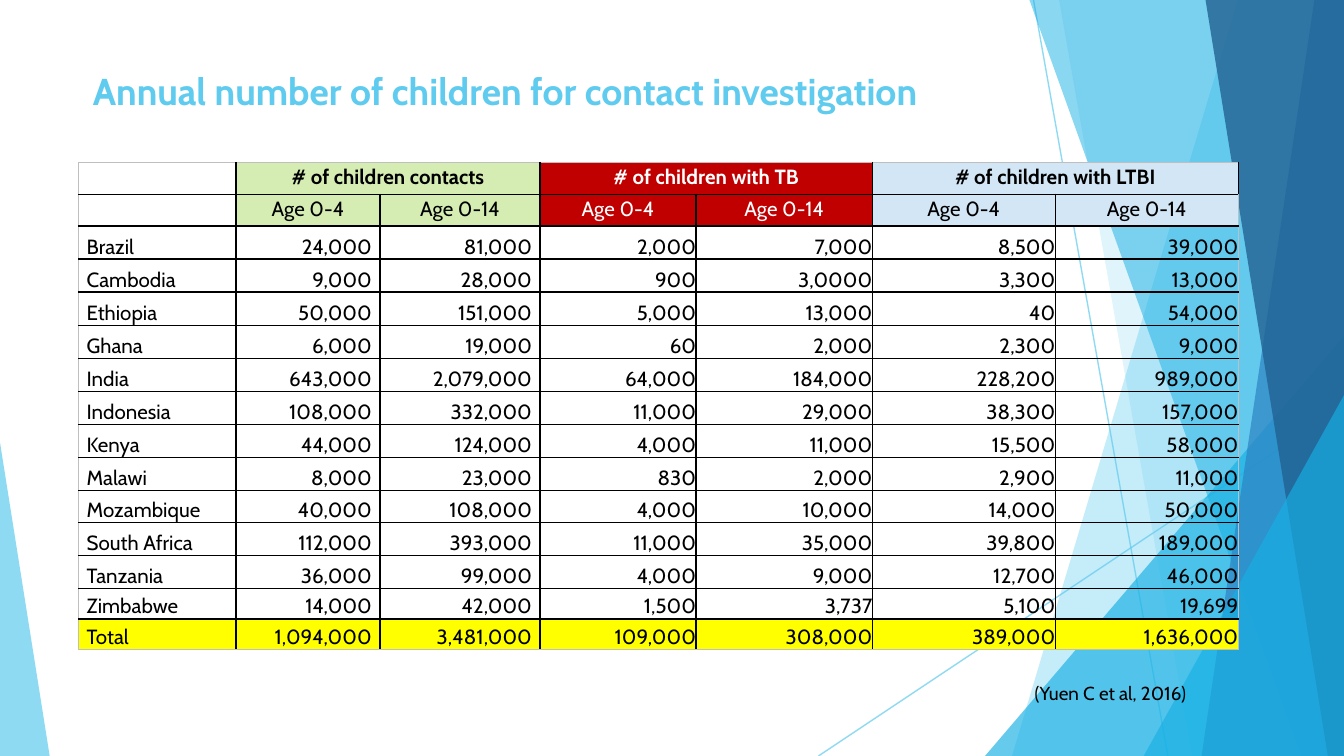
"""Build a slide with a table of children needing contact investigation."""
import pptx
import pptx.dml.color
import pptx.enum.dml
import pptx.enum.shapes
import pptx.enum.text
import pptx.oxml
import pptx.oxml.ns
import pptx.util

THEME = {
    "font": "Cabin",
    "title_size": 20, "table_size": 11, "source_size": 10.1,
    "sky": "5FCBEF", "cyan": "17B0E4", "blue": "2E83C3", "navy": "226292",
    "black": "000000", "white": "FFFFFF", "grey": "BFBFBF",
    "green": "D5EDB3", "red": "C00000", "pale": "D3E6F5", "yellow": "FFFF00",
}

TITLE = "Annual number of children for contact investigation"
SOURCE = "(Yuen C et al, 2016)"
GROUPS = [
    ("# of children contacts", "green", "black"),
    ("# of children with TB", "red", "white"),
    ("# of children with LTBI", "pale", "black"),
]
AGES = ["Age 0-4", "Age 0-14"]
COUNTRIES = [
    ("Brazil", "24,000", "81,000", "2,000", "7,000", "8,500", "39,000"),
    ("Cambodia", "9,000", "28,000", "900", "3,0000", "3,300", "13,000"),
    ("Ethiopia", "50,000", "151,000", "5,000", "13,000", "40", "54,000"),
    ("Ghana", "6,000", "19,000", "60", "2,000", "2,300", "9,000"),
    ("India", "643,000", "2,079,000", "64,000", "184,000", "228,200", "989,000"),
    ("Indonesia", "108,000", "332,000", "11,000", "29,000", "38,300", "157,000"),
    ("Kenya", "44,000", "124,000", "4,000", "11,000", "15,500", "58,000"),
    ("Malawi", "8,000", "23,000", "830", "2,000", "2,900", "11,000"),
    ("Mozambique", "40,000", "108,000", "4,000", "10,000", "14,000", "50,000"),
    ("South Africa", "112,000", "393,000", "11,000", "35,000", "39,800", "189,000"),
    ("Tanzania", "36,000", "99,000", "4,000", "9,000", "12,700", "46,000"),
    ("Zimbabwe", "14,000", "42,000", "1,500", "3,737", "5,100", "19,699"),
    ("Total", "1,094,000", "3,481,000", "109,000", "308,000", "389,000", "1,636,000"),
]
COL_WEIGHTS = [117, 107, 119, 116, 131, 136, 136]
ROW_WEIGHTS = [24, 24] + [25] * 8 + [24, 25, 25, 23, 23]

# Percentages of the slide's width and height.
TITLE_BOX = (5.9, 8.18, 86.2, 11.38)
TABLE_BOX = (5.85, 21.51, 86.3, 64.4)
SOURCE_BOX = (76, 89.24, 17.1, 4.8)
RAYS = [((76.9, 0), (86.9, 100)), ((100, 53.69), (60.9, 100))]
FACETS = [
    ("band", [(92.1, 0), (100, 0), (100, 100), (75.3, 100)], "sky", 36),
    ("band", [(78.8, 0), (100, 0), (100, 100), (88.7, 100)], "sky", 20),
    ("triangle", (73.3, 44.44, 26.7, 55.56, 1), "cyan", 66),
    ("band", [(76.6, 0), (100, 0), (100, 100), (96.8, 100)], "cyan", 50),
    ("band", [(97.8, 0), (100, 0), (100, 100), (89.4, 100)], "blue", 70),
    ("band", [(89.7, 0), (100, 0), (100, 100), (98.8, 100)], "navy", 80),
    ("triangle", (85.1, 52.27, 14.9, 47.73, 1), "cyan", 66),
    ("triangle", (0, 58.49, 3.7, 41.51, 0), "sky", 70),
]

ALIGN = pptx.enum.text.PP_ALIGN
ANCHOR = pptx.enum.text.MSO_ANCHOR

prs = pptx.Presentation()
prs.slide_width = pptx.util.Inches(10)
prs.slide_height = prs.slide_width * 9 // 16
s = prs.slides.add_slide(prs.slide_layouts[5])


def place(*shares):
    """Turn alternating width and height percentages into lengths."""
    sides = (prs.slide_width, prs.slide_height) * 2
    return [round(share * side / 100) for share, side in zip(shares, sides)]


def rgb(name):
    return pptx.dml.color.RGBColor.from_string(THEME[name])


def set_opacity(sp, percent):
    for clr in sp._element.spPr.iter(pptx.oxml.ns.qn("a:srgbClr")):
        alpha = clr.makeelement(pptx.oxml.ns.qn("a:alpha"), {"val": str(percent * 1000)})
        clr.append(alpha)


def write(tf, text, size, color, bold=False, align=ALIGN.LEFT):
    tf.text = text
    p = tf.paragraphs[0]
    p.alignment = align
    for r in p.runs:
        r.font.name, r.font.size = THEME["font"], pptx.util.Pt(THEME[size])
        r.font.bold, r.font.color.rgb = bold, rgb(color)
    return p


def draw_rays():
    for start, end in RAYS:
        ray = s.shapes.add_connector(
            pptx.enum.shapes.MSO_CONNECTOR.STRAIGHT, *place(*start, *end))
        ray.line.color.rgb = rgb("sky")
        ray.line.width = pptx.util.Pt(0.75)
        set_opacity(ray, 70)
        spPr = ray._element.spPr
        spPr.append(spPr.makeelement(pptx.oxml.ns.qn("a:effectLst"), {}))


def draw_facets():
    for kind, outline, color, percent in FACETS:
        if kind == "band":
            corners = [place(*corner) for corner in outline]
            builder = s.shapes.build_freeform(*corners[0])
            builder.add_line_segments(corners[1:], close=True)
            sp = builder.convert_to_shape()
        else:
            sp = s.shapes.add_shape(
                pptx.enum.shapes.MSO_SHAPE.ISOSCELES_TRIANGLE, *place(*outline[:4]))
            sp.adjustments[0] = outline[4]
        sp.shadow.inherit = False
        sp.line.fill.background()
        sp.fill.solid()
        sp.fill.fore_color.rgb = rgb(color)
        set_opacity(sp, percent)


def style_cell(cell, fill, edges):
    tcPr = cell._tc.get_or_add_tcPr()
    for side, outer in zip("LRTB", edges):
        color = THEME["grey" if outer else "black"]
        tcPr.append(pptx.oxml.parse_xml(
            f'<a:ln{side} {pptx.oxml.ns.nsdecls("a")} w="12700"><a:solidFill>'
            f'<a:srgbClr val="{color}"/></a:solidFill></a:ln{side}>'))
    if fill:
        cell.fill.solid()
        cell.fill.fore_color.rgb = rgb(fill)
    else:
        cell.fill.background()


def draw_table():
    heads = [[""], [""]]
    for name, _, _ in GROUPS:
        heads[0] += [name, ""]
        heads[1] += AGES
    rows = heads + COUNTRIES
    n_rows, n_cols = len(rows), len(COL_WEIGHTS)
    box = place(*TABLE_BOX)
    table = s.shapes.add_table(n_rows, n_cols, *box).table
    table.first_row = table.horz_banding = False
    for col, weight in zip(table.columns, COL_WEIGHTS):
        col.width = round(box[2] * weight / sum(COL_WEIGHTS))
    for row, weight in zip(table.rows, ROW_WEIGHTS):
        row.height = round(box[3] * weight / sum(ROW_WEIGHTS))
    for i, values in enumerate(rows):
        for j, text in enumerate(values):
            cell = table.cell(i, j)
            head = i < 2
            fill, color = ("yellow" if i == n_rows - 1 else None), "black"
            if head and j:
                _, fill, color = GROUPS[(j - 1) // 2]
            align = ALIGN.CENTER if head else ALIGN.RIGHT if j else ALIGN.LEFT
            inset = pptx.util.Inches(0 if j > 2 and not head else 0.06)
            cell.margin_left = cell.margin_right = inset
            cell.margin_top = pptx.util.Inches(0 if head or not j else 0.01)
            cell.margin_bottom = 0
            cell.vertical_anchor = ANCHOR.TOP if head else ANCHOR.BOTTOM
            style_cell(cell, fill, (j == 0, j == n_cols - 1, i == 0, i == n_rows - 1))
            p = write(cell.text_frame, text, "table_size", color, i == 0, align)
            p.line_spacing = 1.07
            if not text:
                end = p._p.get_or_add_endParaRPr()
                end.set("sz", str(THEME["table_size"] * 100))
    for j in range(1, n_cols, 2):
        table.cell(0, j).merge(table.cell(0, j + 1))


def draw_texts():
    title = s.shapes.title
    title.left, title.top, title.width, title.height = place(*TITLE_BOX)
    write(title.text_frame, TITLE, "title_size", "sky", bold=True)
    title.text_frame.vertical_anchor = ANCHOR.TOP
    title.text_frame.auto_size = pptx.enum.text.MSO_AUTO_SIZE.NONE
    s.shapes._spTree.append(title._element)
    source = s.shapes.add_textbox(*place(*SOURCE_BOX))
    source.text_frame.word_wrap = True
    write(source.text_frame, SOURCE, "source_size", "black")


draw_rays()
draw_facets()
draw_table()
draw_texts()
prs.save("out.pptx")
